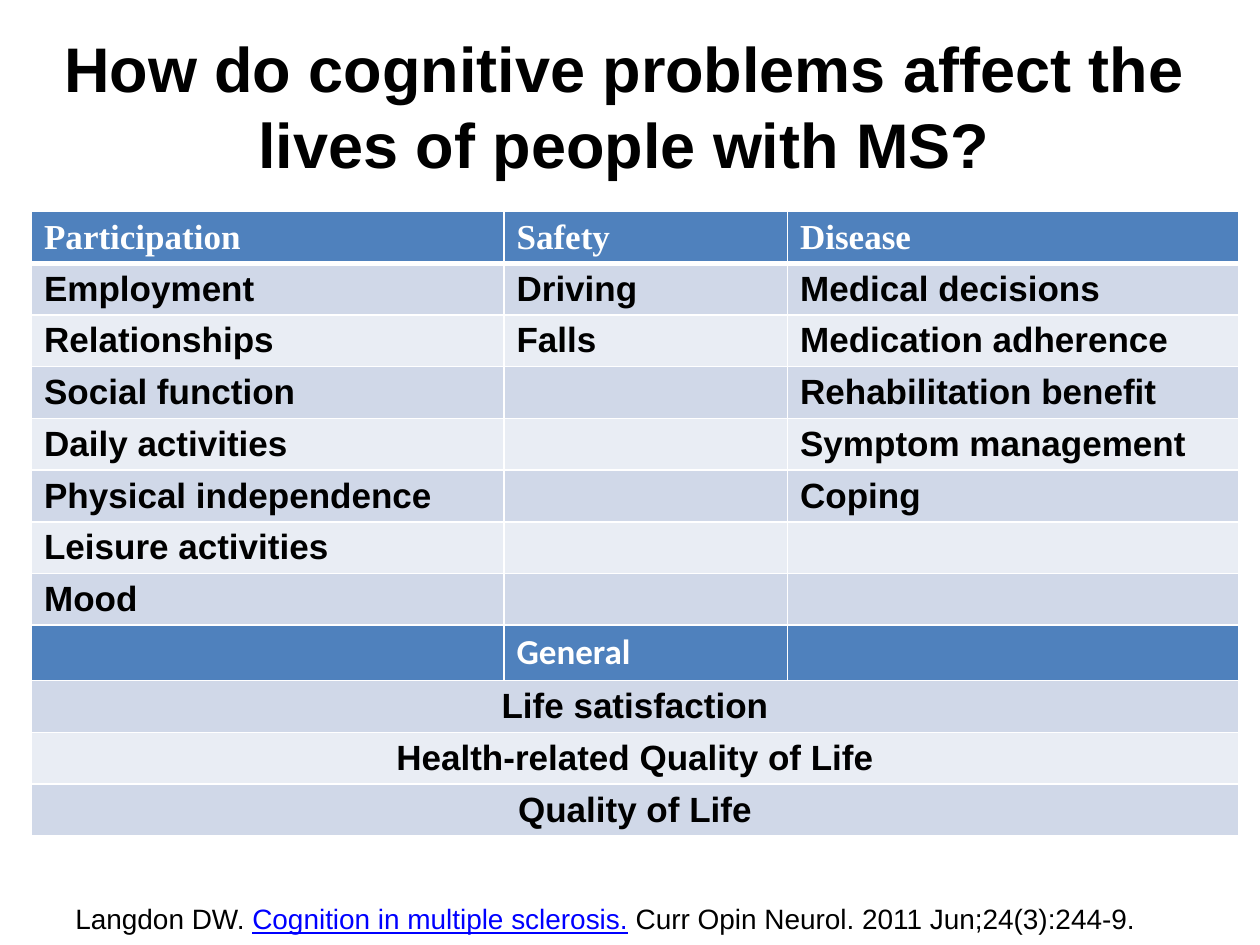
from lxml.etree import SubElement
from pptx import Presentation
from pptx.dml.color import RGBColor
from pptx.enum.text import MSO_ANCHOR as Anchor, MSO_AUTO_SIZE as AutoSize, PP_ALIGN as Align
from pptx.oxml.ns import qn
from pptx.util import Inches, Pt

WHITE, BLACK, LINK_BLUE = "FFFFFF", "000000", "0000FF"
HEADER_BLUE, DARK_BAND, LIGHT_BAND = "4F81BD", "D0D8E8", "E9EDF4"

TITLE_FORMAT = {"name": "Arial", "size": Pt(36), "bold": True}
BODY_FORMAT = {"name": "Arial", "size": Pt(20), "bold": True}
HEADER_FORMAT = {**BODY_FORMAT, "name": "Times New Roman"}
GENERAL_FORMAT = {**BODY_FORMAT, "name": "Calibri"}
CITATION_FORMAT = {"name": "Arial", "size": Pt(16), "bold": False}

COLUMN_WIDTHS = (3.75, 2.25, 3.58)
ROW_HEIGHT = 0.41
GENERAL_ROW = 8
# A row with a single entry spans the whole table
ROWS = [
    ("Participation", "Safety", "Disease"),
    ("Employment", "Driving", "Medical decisions"),
    ("Relationships", "Falls", "Medication adherence"),
    ("Social function", "", "Rehabilitation benefit"),
    ("Daily activities", "", "Symptom management"),
    ("Physical independence", "", "Coping"),
    ("Leisure activities", "", ""),
    ("Mood", "", ""),
    ("", "General", ""),
    ("Life satisfaction",),
    ("Health-related Quality of Life",),
    ("Quality of Life",),
]


def rgb(value):
    return RGBColor.from_string(value)


def place(shape, left, top, width, height):
    shape.left, shape.top = Inches(left), Inches(top)
    shape.width, shape.height = Inches(width), Inches(height)


def add_run(paragraph, text, font_format, color):
    run = paragraph.add_run()
    run.text = text
    for name, value in font_format.items():
        setattr(run.font, name, value)
    run.font.color.rgb = rgb(color)
    return run


def set_borders(cell, bottom_width):
    properties = cell._tc.get_or_add_tcPr()
    for side, width in (("L", 1), ("R", 1), ("T", 1), ("B", bottom_width)):
        line = SubElement(properties, qn(f"a:ln{side}"), w=str(Pt(width)))
        fill = SubElement(line, qn("a:solidFill"))
        SubElement(fill, qn("a:srgbClr"), val=WHITE)


def row_style(index):
    """Return the fill, font format and text colour of a table row."""
    if index == 0:
        return HEADER_BLUE, HEADER_FORMAT, WHITE
    if index == GENERAL_ROW:
        return HEADER_BLUE, GENERAL_FORMAT, WHITE
    return (DARK_BAND if index % 2 else LIGHT_BAND), BODY_FORMAT, BLACK


def add_title(slide, text):
    title = slide.shapes.title
    place(title, 0.08, 0.42, 9.75, 0.83)
    frame = title.text_frame
    frame.word_wrap = True
    frame.auto_size = AutoSize.NONE
    frame.vertical_anchor = Anchor.MIDDLE
    frame.paragraphs[0].alignment = Align.CENTER
    add_run(frame.paragraphs[0], text, TITLE_FORMAT, BLACK)


def add_effects_table(slide):
    table = slide.shapes.add_table(
        len(ROWS), len(COLUMN_WIDTHS), Inches(0.25), Inches(1.68),
        Inches(sum(COLUMN_WIDTHS)), Inches(ROW_HEIGHT * len(ROWS))).table
    for column, width in zip(table.columns, COLUMN_WIDTHS):
        column.width = Inches(width)

    for index, (row, texts) in enumerate(zip(table.rows, ROWS)):
        row.height = Inches(ROW_HEIGHT)
        fill, font_format, color = row_style(index)
        for cell in row.cells:
            set_borders(cell, 3 if index == 0 else 1)
            cell.fill.solid()
            cell.fill.fore_color.rgb = rgb(fill)
        for cell, text in zip(row.cells, texts):
            if text:
                add_run(cell.text_frame.paragraphs[0], text, font_format, color)
        if len(texts) == 1:
            first = table.cell(index, 0)
            first.merge(table.cell(index, len(COLUMN_WIDTHS) - 1))
            first.text_frame.paragraphs[0].alignment = Align.CENTER


def add_citation(slide):
    box = slide.shapes.add_textbox(Inches(0.5), Inches(7.11), Inches(9.33), Inches(0.77))
    box.text_frame.word_wrap = True
    paragraph = box.text_frame.paragraphs[0]
    add_run(paragraph, "Langdon DW. ", CITATION_FORMAT, BLACK)
    add_run(paragraph, "Cognition in multiple sclerosis.",
            {**CITATION_FORMAT, "underline": True}, LINK_BLUE)
    add_run(paragraph, " Curr Opin Neurol. 2011 Jun;24(3):244-9.", CITATION_FORMAT, BLACK)


def main():
    presentation = Presentation()
    presentation.slide_width, presentation.slide_height = Inches(10), Inches(7.5)
    slide = presentation.slides.add_slide(presentation.slide_layouts[5])  # title only

    add_effects_table(slide)
    add_title(slide, "How do cognitive problems affect the lives of people with MS?")
    add_citation(slide)
    presentation.save("out.pptx")


if __name__ == "__main__":
    main()
